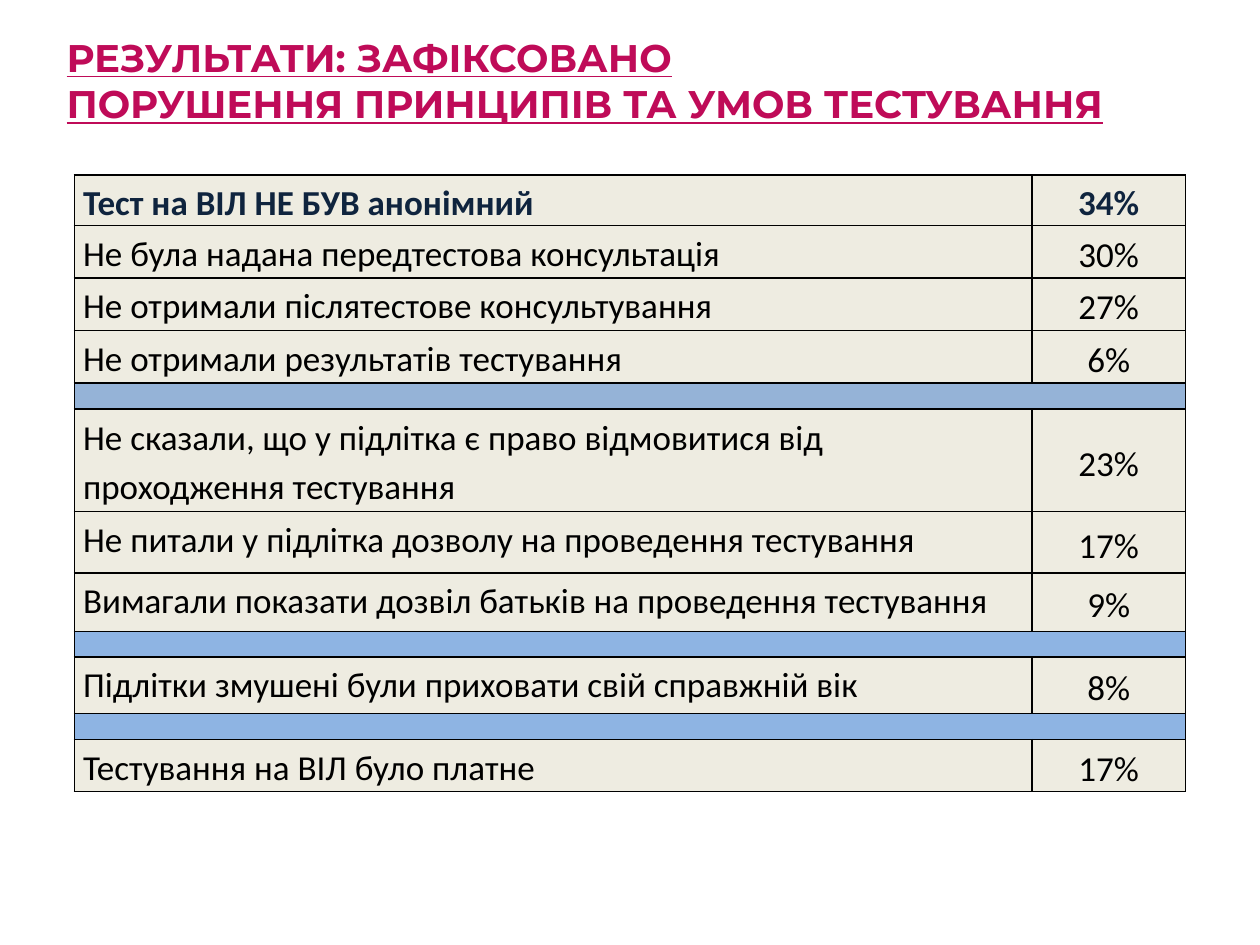
from dataclasses import dataclass

from lxml.etree import SubElement
from pptx import Presentation
from pptx.dml.color import RGBColor
from pptx.enum.text import MSO_ANCHOR, PP_ALIGN
from pptx.oxml.ns import qn
from pptx.util import Pt


@dataclass(frozen=True)
class Theme:
    title_color: str = "BF0B58"
    highlight: str = "0F243E"
    text: str = "000000"
    border: str = "000000"
    cell: str = "EEECE1"
    first_band: str = "95B3D7"
    band: str = "8EB4E3"
    title_font: str = "Montserrat"
    body_font: str = "Calibri"
    title_size: int = 22
    body_size: int = 20
    band_size: int = 8


theme = Theme()


def set_font(font, color, **values):
    for name, value in values.items():
        setattr(font, name, value)
    font.color.rgb = RGBColor.from_string(color)


def style_cell(cell, fill):
    """Draw a thin border on all four sides, then set margins and fill."""
    properties = cell._tc.get_or_add_tcPr()
    for side in ("a:lnL", "a:lnR", "a:lnT", "a:lnB"):
        line = SubElement(properties, qn(side), w=str(Pt(1)))
        solid = SubElement(line, qn("a:solidFill"))
        SubElement(solid, qn("a:srgbClr"), val=theme.border)
    margins = {"margin_left": 5, "margin_right": 5, "margin_top": 0.7, "margin_bottom": 0}
    for name, value in margins.items():
        setattr(cell, name, Pt(value))
    cell.fill.solid()
    cell.fill.fore_color.rgb = RGBColor.from_string(fill)


presentation = Presentation()
presentation.slide_width, presentation.slide_height = Pt(720), Pt(540)
slide = presentation.slides.add_slide(presentation.slide_layouts[6])

# Title
title = slide.shapes.add_textbox(Pt(31), Pt(16), Pt(675), Pt(61))
title.text_frame.word_wrap = True
title_paragraph = title.text_frame.paragraphs[0]
title_paragraph.text = "РЕЗУЛЬТАТИ: ЗАФІКСОВАНО\vПОРУШЕННЯ ПРИНЦИПІВ ТА УМОВ ТЕСТУВАННЯ"
for run in title_paragraph.runs:
    set_font(run.font, theme.title_color, name=theme.title_font,
             size=Pt(theme.title_size), bold=True, underline=True)

# Findings: (row height, finding, share); a band has its colour and no share
rows = [
    (28.8, "Тест на ВІЛ НЕ БУВ анонімний", "34%"),
    (30, "Не була надана передтестова консультація", "30%"),
    (30, "Не отримали післятестове консультування", "27%"),
    (30, "Не отримали результатів тестування", "6%"),
    (15, theme.first_band, None),
    (58.6, "Не сказали, що у підлітка є право відмовитися від проходження тестування", "23%"),
    (35, "Не питали у підлітка дозволу на проведення тестування", "17%"),
    (33.5, "Вимагали показати дозвіл батьків на проведення тестування", "9%"),
    (14.5, theme.band, None),
    (32.4, "Підлітки змушені були приховати свій справжній вік", "8%"),
    (15, theme.band, None),
    (29.5, "Тестування на ВІЛ було платне", "17%"),
]
column_widths = (547.2, 87.8)
table = slide.shapes.add_table(
    len(rows), len(column_widths), Pt(42.5), Pt(100),
    Pt(sum(column_widths)), Pt(sum(height for height, _, _ in rows))).table
table.first_row = table.horz_banding = False
for column, width in zip(table.columns, column_widths):
    column.width = Pt(width)

for index, (height, finding, share) in enumerate(rows):
    table.rows[index].height = Pt(height)
    cells = list(table.rows[index].cells)
    if share is None:
        for cell in cells:
            style_cell(cell, finding)
            SubElement(cell.text_frame.paragraphs[0]._p, qn("a:endParaRPr"),
                       sz=str(theme.band_size * 100))
        cells[0].merge(cells[1])
        continue
    columns = ((finding, PP_ALIGN.LEFT, MSO_ANCHOR.TOP),
               (share, PP_ALIGN.CENTER, MSO_ANCHOR.MIDDLE))
    for cell, (text, alignment, anchor) in zip(cells, columns):
        style_cell(cell, theme.cell)
        cell.vertical_anchor = anchor
        paragraph = cell.text_frame.paragraphs[0]
        paragraph.alignment = alignment
        paragraph.line_spacing = 1.15
        run = paragraph.add_run()
        run.text = text
        set_font(run.font, theme.highlight if index == 0 else theme.text,
                 name=theme.body_font, size=Pt(theme.body_size), bold=index == 0)

presentation.save("out.pptx")
